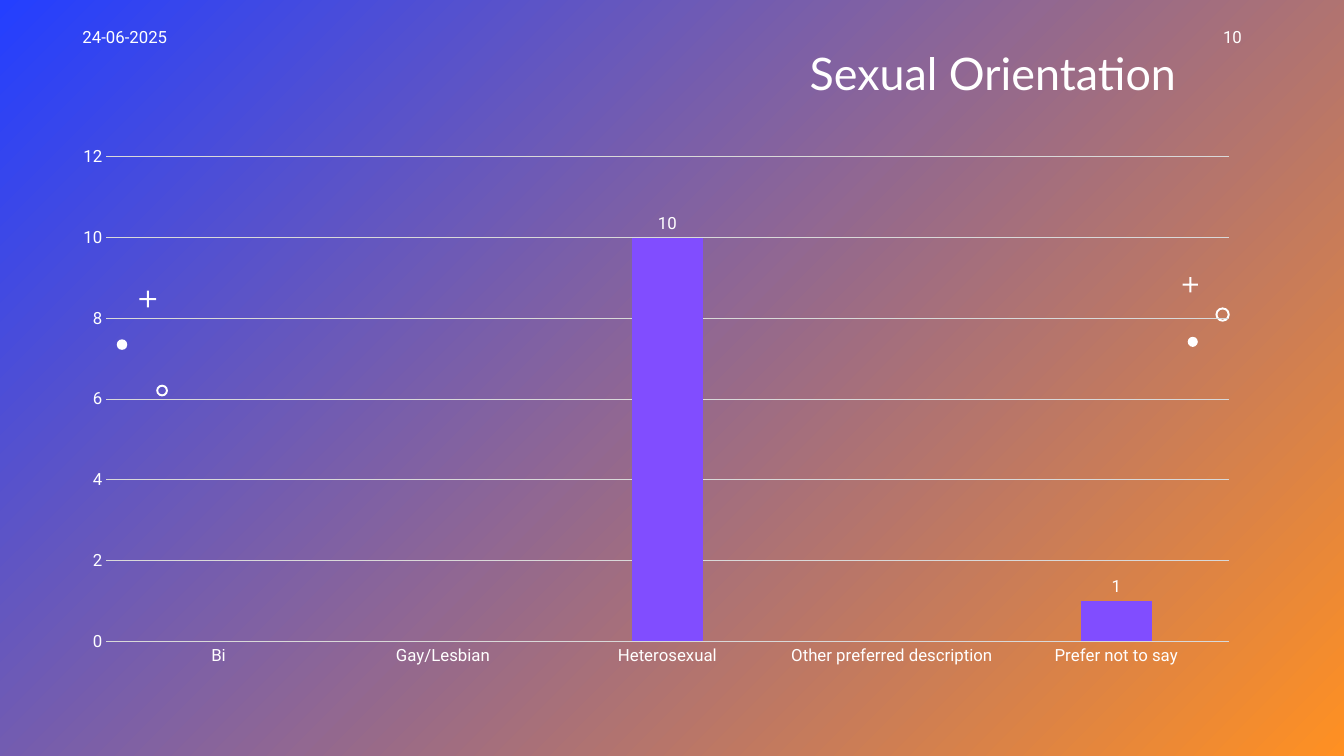
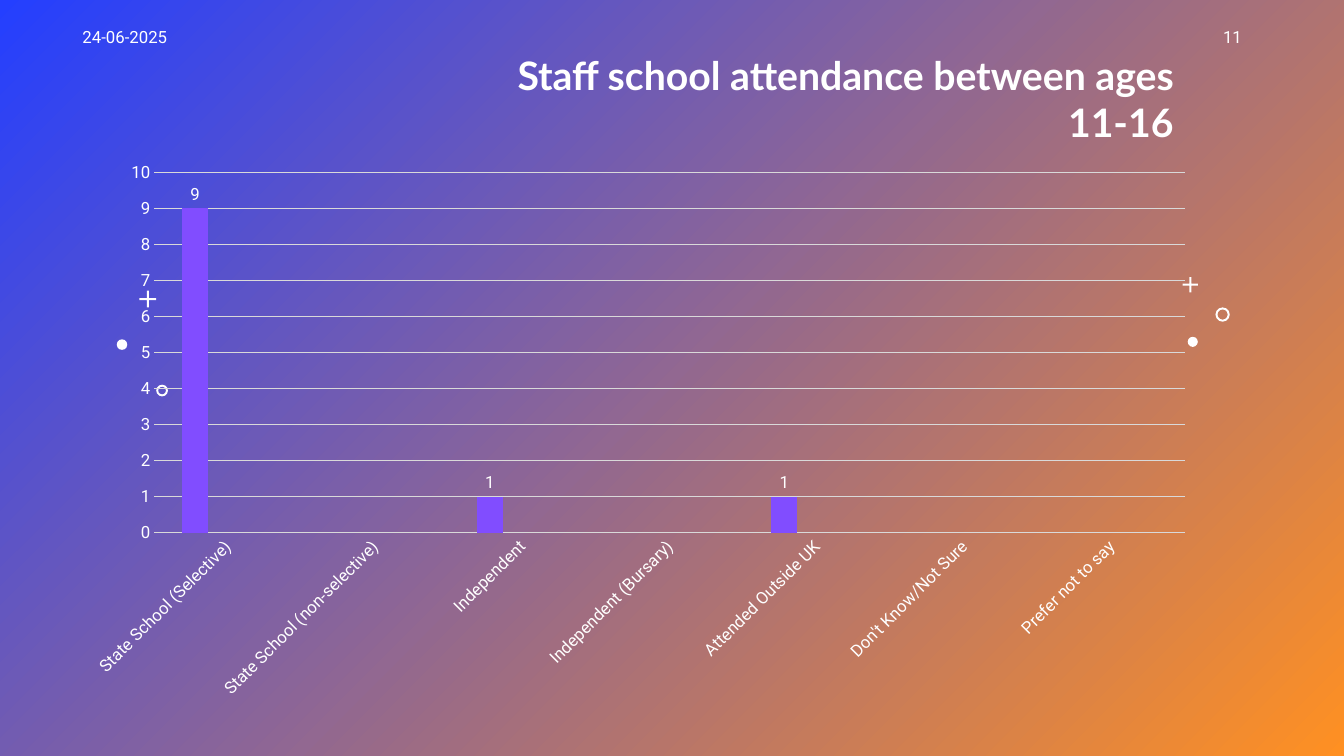
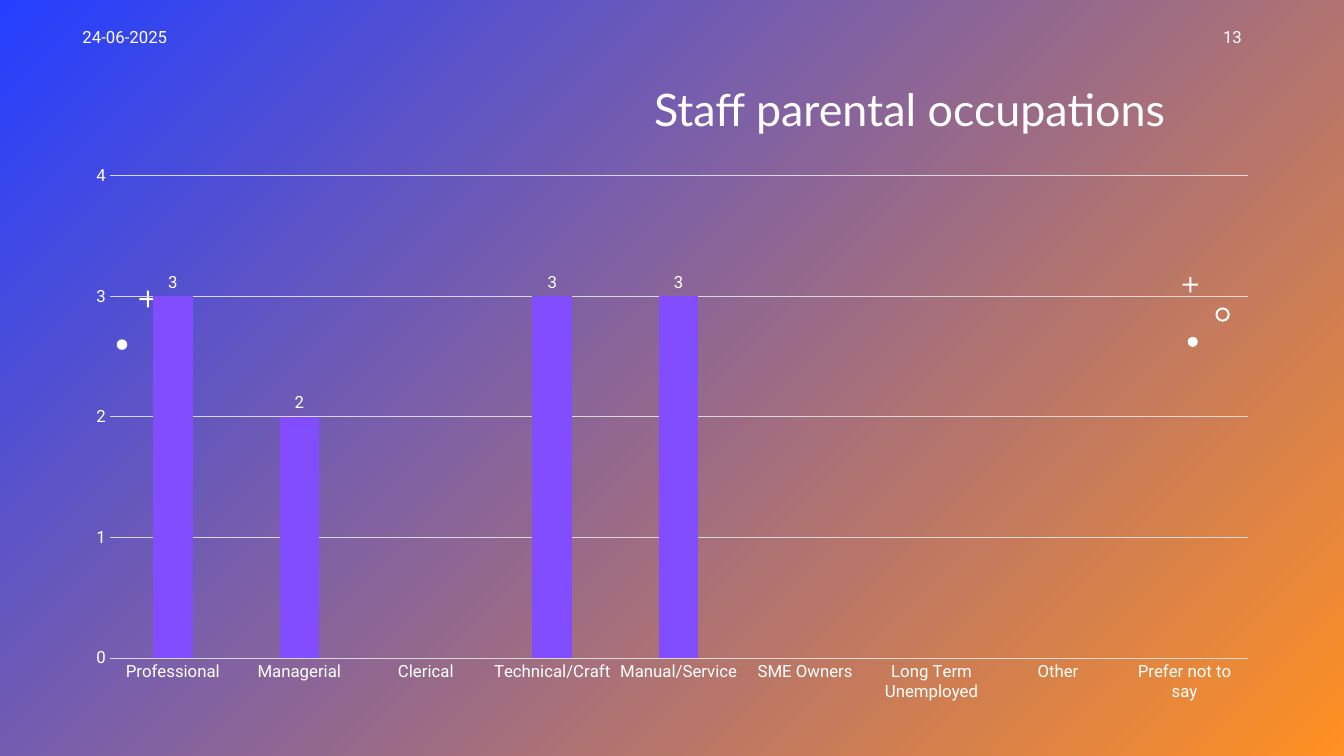
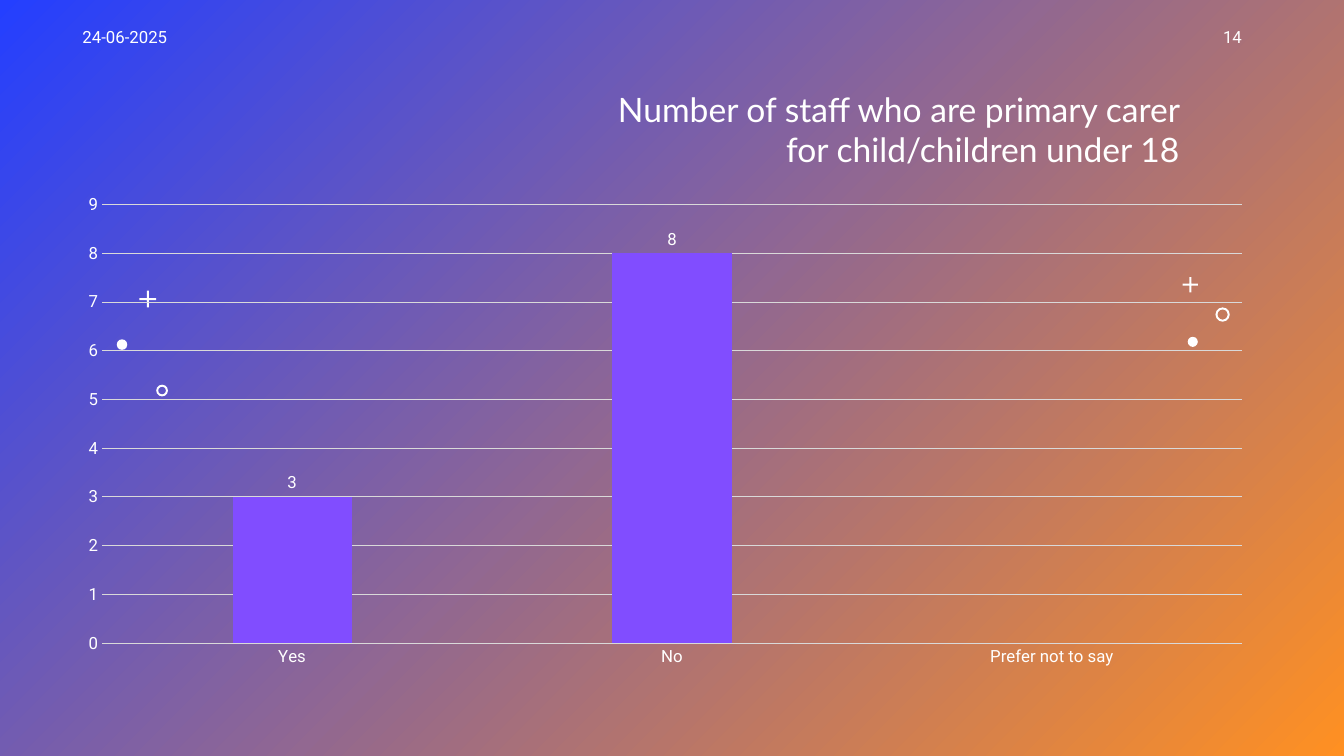
from dataclasses import dataclass
from typing import Any, NamedTuple, Optional

from pptx import Presentation
from pptx.chart.data import CategoryChartData
from pptx.dml.color import RGBColor
from pptx.enum.chart import XL_CHART_TYPE as ChartType
from pptx.enum.chart import XL_LABEL_POSITION as LabelPosition
from pptx.enum.chart import XL_TICK_MARK as TickMark
from pptx.enum.shapes import MSO_SHAPE as ShapeType
from pptx.enum.text import MSO_ANCHOR as Anchor
from pptx.enum.text import MSO_AUTO_SIZE as AutoSize
from pptx.enum.text import PP_ALIGN as Align
from pptx.util import Inches, Pt


@dataclass(frozen=True)
class Theme:
    white: RGBColor = RGBColor(0xFF, 0xFF, 0xFF)
    grid: RGBColor = RGBColor(0xD9, 0xD9, 0xD9)
    blue: RGBColor = RGBColor(0x24, 0x3F, 0xFF)
    orange: RGBColor = RGBColor(0xFF, 0x90, 0x22)
    purple: RGBColor = RGBColor(0x81, 0x4D, 0xFF)
    pink: RGBColor = RGBColor(0xFF, 0x83, 0xB6)
    title_font: str = "Lato"
    body_font: str = "Roboto"
    small: float = 12
    line: float = 0.75


THEME = Theme()
SERIES_COLORS = (THEME.purple, THEME.blue, THEME.pink)
SLIDE_WIDTH, SLIDE_HEIGHT = Inches(13.33), Inches(7.5)
COLUMNS, ROWS = 160, 90
ORNAMENT_STROKE = 0.24
AUTO_ROTATION, SLANTED = "-60000000", "-2700000"
TITLE_ONLY = 5


class Box(NamedTuple):
    column: float
    row: float
    columns: float
    rows: float

    def place(self) -> tuple[int, int, int, int]:
        across, down = SLIDE_WIDTH / COLUMNS, SLIDE_HEIGHT / ROWS
        return (round(self.column * across), round(self.row * down),
                round(self.columns * across), round(self.rows * down))


class Ornament(NamedTuple):
    kind: ShapeType
    column: float
    row: float
    size: float


@dataclass(frozen=True)
class ChartSlide:
    number: str
    title: str
    title_box: Box
    title_size: float
    chart_box: Box
    values: dict[str, Optional[int]]
    maximum: int
    step: int = 1
    series_count: int = 1
    bold: bool = False
    label_rotation: str = AUTO_ROTATION


DATE = "24-06-2025"
DATE_BOX = Box(8.64, 2.64, 36, 4.8)
NUMBER_BOX = Box(113.04, 2.64, 36, 4.8)

ORNAMENTS = (
    Ornament(ShapeType.OVAL, 141.4, 40.1, 1.2),
    Ornament(ShapeType.CROSS, 140.8, 33, 1.8),
    Ornament(ShapeType.DONUT, 144.7, 36.6, 1.7),
    Ornament(ShapeType.CROSS, 16.6, 34.6, 2),
    Ornament(ShapeType.OVAL, 13.9, 40.4, 1.25),
    Ornament(ShapeType.DONUT, 18.6, 45.8, 1.4),
)

SLIDES = (
    ChartSlide(
        "10", "Sexual Orientation ", Box(74.3, 4.8, 68.3, 7.7), 32,
        Box(7.1, 16.2, 142, 64.3),
        {"Bi": None, "Gay/Lesbian": None, "Heterosexual": 10,
         "Other preferred description": None, "Prefer not to say": 1},
        maximum=12, step=2,
    ),
    ChartSlide(
        "11", "Staff school attendance between ages 11-16",
        Box(56.8, 5.5, 84.1, 12.5), 28, Box(8.6, 18, 135.2, 66.5),
        {"State School (Selective)": 9, "State School (non-selective)": None,
         "Independent": 1, "Independent (Bursary)": None,
         "Attended Outside UK": 1, "Don't Know/Not Sure": None,
         "Prefer not to say": None},
        maximum=10, series_count=3, bold=True, label_rotation=SLANTED,
    ),
    ChartSlide(
        "13", "Staff parental occupations ", Box(66.5, 9.1, 74.8, 7.7), 32,
        Box(8.6, 18.4, 142.8, 66.5),
        {"Professional": 3, "Managerial": 2, "Clerical": None,
         "Technical/Craft ": 3, "Manual/Service": 3, "SME Owners": None,
         "Long Term Unemployed": None, "Other": None,
         "Prefer not to say": None},
        maximum=4,
    ),
    ChartSlide(
        "14", "Number of staff who are primary carer for child/children under 18",
        Box(70.9, 10, 70.7, 10.9), 24, Box(7.7, 22, 143, 58.6),
        {"Yes": 3, "No": 8, "Prefer not to say": None},
        maximum=9,
    ),
)


def apply_format(target: Any, values: dict[str, Any]) -> None:
    for name, value in values.items():
        setattr(target, name, value)


def format_font(font: Any, name: str, size: float, bold: bool = False) -> None:
    apply_format(font, {"name": name, "size": Pt(size), "bold": bold})
    font.color.rgb = THEME.white


def format_line(line: Any) -> None:
    line.color.rgb = THEME.grid
    line.width = Pt(THEME.line)


def write_text(shape: Any, text: str, align: Align, name: str, size: float,
               bold: bool = False, auto_size: AutoSize = AutoSize.NONE) -> None:
    frame = shape.text_frame
    frame.text = text
    apply_format(frame, {"word_wrap": True, "auto_size": auto_size,
                         "vertical_anchor": Anchor.TOP})
    paragraph = frame.paragraphs[0]
    paragraph.alignment = align
    format_font(paragraph.runs[0].font, name, size, bold)


def paint_background(master: Any) -> None:
    fill = master.background.fill
    fill.gradient()
    fill.gradient_angle = 315
    for stop, color in zip(fill.gradient_stops, (THEME.blue, THEME.orange)):
        stop.color.rgb = color


def add_ornaments(slide: Any, layout: Any) -> None:
    for kind, column, row, size in ORNAMENTS:
        shape = slide.shapes.add_shape(kind, *Box(column, row, size, size).place())
        shape.shadow.inherit = False
        shape.fill.solid()
        shape.fill.fore_color.rgb = THEME.white
        shape.line.fill.background()
        if kind == ShapeType.CROSS:
            shape.adjustments[0] = (size - ORNAMENT_STROKE) / 2 / size
        elif kind == ShapeType.DONUT:
            shape.adjustments[0] = ORNAMENT_STROKE / size
        layout.shapes.element.append(shape.element)


def add_title(slide: Any, content: ChartSlide) -> None:
    title = slide.shapes.title
    apply_format(title, dict(zip(("left", "top", "width", "height"),
                                 content.title_box.place())))
    write_text(title, content.title, Align.RIGHT, THEME.title_font,
               content.title_size, content.bold, AutoSize.SHAPE_TO_FIT_TEXT)


def add_header_text(slide: Any, box: Box, text: str, align: Align) -> None:
    write_text(slide.shapes.add_textbox(*box.place()), text, align,
               THEME.body_font, THEME.small)


def format_axes(chart: Any, content: ChartSlide) -> None:
    for axis in (chart.category_axis, chart.value_axis):
        apply_format(axis, {"major_tick_mark": TickMark.NONE,
                            "minor_tick_mark": TickMark.NONE})
        format_font(axis.tick_labels.font, THEME.body_font, THEME.small)
    format_line(chart.category_axis.format.line)
    value_axis = chart.value_axis
    apply_format(value_axis, {"minimum_scale": 0, "maximum_scale": content.maximum,
                              "major_unit": content.step, "has_major_gridlines": True})
    value_axis.format.line.fill.background()
    format_line(value_axis.major_gridlines.format.line)
    for body in chart.element.xpath("c:chart/c:plotArea/c:catAx/c:txPr/a:bodyPr"):
        body.set("rot", content.label_rotation)
        body.set("vert", "horz")


def add_column_chart(slide: Any, content: ChartSlide) -> None:
    data = CategoryChartData()
    data.categories = list(content.values)
    empty = [None] * len(content.values)
    for index in range(content.series_count):
        data.add_series(f"Series {index + 1}",
                        empty if index else list(content.values.values()))
    chart = slide.shapes.add_chart(ChartType.COLUMN_CLUSTERED,
                                   *content.chart_box.place(), data).chart
    apply_format(chart, {"has_title": False, "has_legend": False})
    apply_format(chart.font, {"name": THEME.body_font, "size": Pt(10)})
    plot = chart.plots[0]
    apply_format(plot, {"gap_width": 219, "overlap": -27, "vary_by_categories": False})
    for series, color in zip(plot.series, SERIES_COLORS):
        series.format.fill.solid()
        series.format.fill.fore_color.rgb = color
    labels = plot.series[0].data_labels
    apply_format(labels, {"show_value": True, "position": LabelPosition.OUTSIDE_END})
    format_font(labels.font, THEME.body_font, THEME.small)
    format_axes(chart, content)


def main() -> None:
    presentation = Presentation()
    apply_format(presentation, {"slide_width": SLIDE_WIDTH, "slide_height": SLIDE_HEIGHT})
    paint_background(presentation.slide_master)
    layout = presentation.slide_layouts[TITLE_ONLY]
    for content in SLIDES:
        slide = presentation.slides.add_slide(layout)
        add_title(slide, content)
        add_column_chart(slide, content)
        add_header_text(slide, DATE_BOX, DATE, Align.LEFT)
        add_header_text(slide, NUMBER_BOX, content.number, Align.RIGHT)
    add_ornaments(presentation.slides[0], layout)
    presentation.save("out.pptx")


if __name__ == "__main__":
    main()
